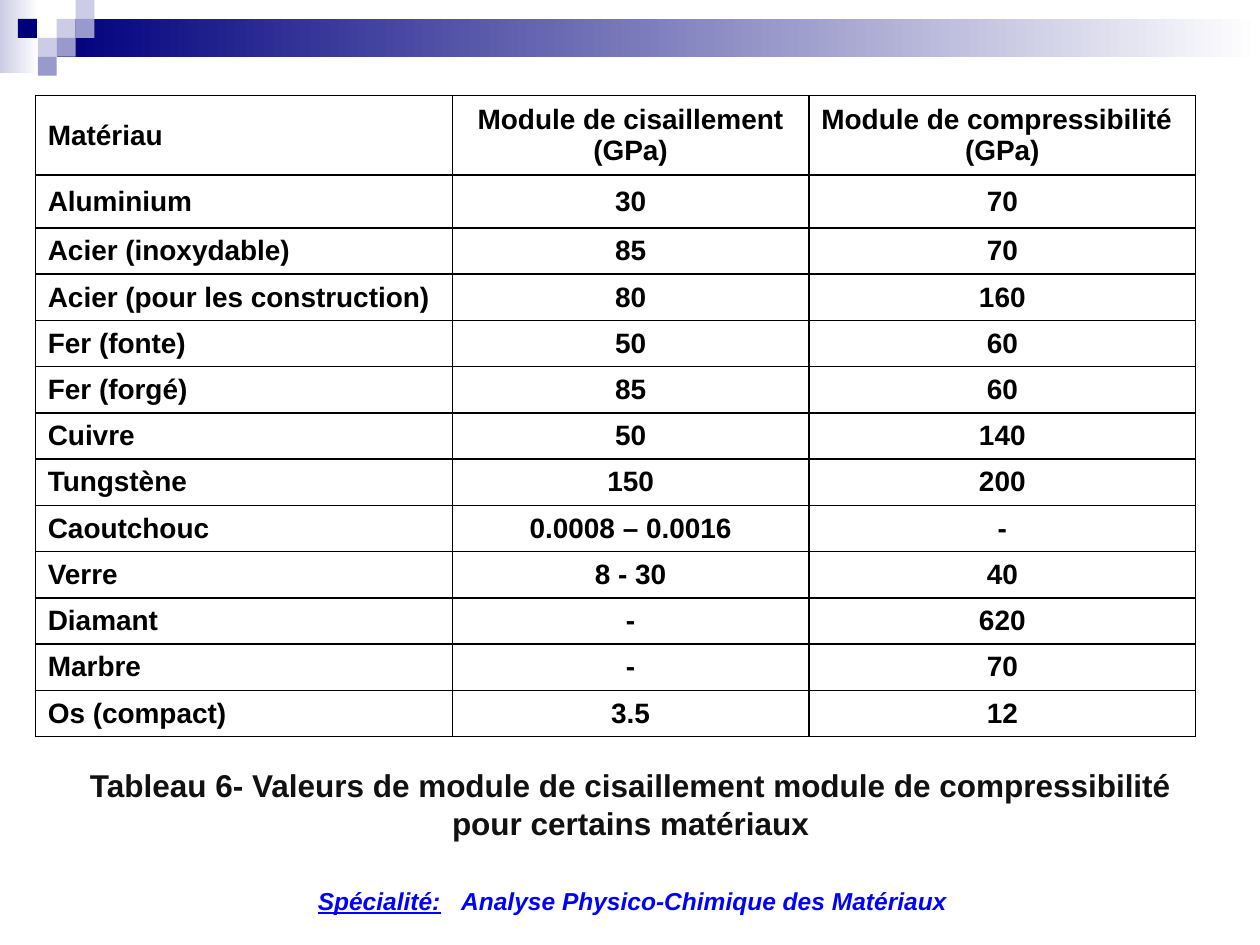
from lxml import etree
from pptx import Presentation
from pptx.dml.color import RGBColor
from pptx.enum.shapes import MSO_SHAPE
from pptx.enum.text import MSO_ANCHOR, PP_ALIGN
from pptx.oxml.ns import qn
from pptx.util import Inches, Pt

RECT = MSO_SHAPE.RECTANGLE
MIDDLE = MSO_ANCHOR.MIDDLE
LEFT, CENTER = PP_ALIGN.LEFT, PP_ALIGN.CENTER

NAVY, LILAC, MAUVE, WHITE = "00007D", "CCCCE6", "9999CC", "FFFFFF"
BLACK, CAPTION, BLUE = "000000", "111111", "0000FF"

COL_WIDTHS = [3.31, 2.83, 3.07]
HEADER_HEIGHT, FIRST_HEIGHT = 0.63, 0.42
ROWS = [
    ("Matériau", "Module de cisaillement\n(GPa)", "Module de compressibilité\n(GPa)"),
    ("Aluminium", "30", "70"),
    ("Acier (inoxydable)", "85", "70"),
    ("Acier (pour les construction)", "80", "160"),
    ("Fer (fonte)", "50", "60"),
    ("Fer (forgé)", "85", "60"),
    ("Cuivre", "50", "140"),
    ("Tungstène", "150", "200"),
    ("Caoutchouc", "0.0008 – 0.0016", "-"),
    ("Verre", "8 - 30", "40"),
    ("Diamant", "-", "620"),
    ("Marbre", "-", "70"),
    ("Os (compact)", "3.5", "12"),
]


def rgb(value):
    return RGBColor.from_string(value)


def set_font(p, size, color, italic=False):
    p.font.name = "Arial"
    p.font.size = Pt(size)
    p.font.bold = True
    p.font.italic = italic
    p.font.color.rgb = rgb(color)


def add_rect(s, x, y, w, h, color, end=None):
    sp = s.shapes.add_shape(RECT, Inches(x), Inches(y), Inches(w), Inches(h))
    sp.shadow.inherit = False
    sp.line.fill.background()
    if end is None:
        sp.fill.solid()
        sp.fill.fore_color.rgb = rgb(color)
        return
    sp.fill.gradient()
    sp.fill.gradient_angle = 0
    for stop, stop_color in zip(sp.fill.gradient_stops, (color, end)):
        stop.color.rgb = rgb(stop_color)


def add_banner(s, x, y, w, unit):
    add_rect(s, x, y, 0.31, 0.58, LILAC, WHITE)
    add_rect(s, x + 3 * unit, y + unit, w - 3 * unit, 2 * unit, NAVY, WHITE)
    squares = [
        (3, 1, LILAC), (4, 0, LILAC), (4, 1, MAUVE), (2, 2, LILAC),
        (0.95, 1, NAVY), (3, 2, MAUVE), (2, 3, MAUVE),
    ]
    for col, row, color in squares:
        add_rect(s, x + col * unit, y + row * unit, unit, unit, color)


def set_borders(cell):
    tcPr = cell._tc.get_or_add_tcPr()
    for i, side in enumerate(("lnL", "lnR", "lnT", "lnB")):
        ln = etree.Element(qn(f"a:{side}"), w=str(Pt(1)))
        fill = etree.SubElement(ln, qn("a:solidFill"))
        etree.SubElement(fill, qn("a:srgbClr"), val=BLACK)
        tcPr.insert(i, ln)


def fill_cell(cell, text, align):
    cell.fill.background()
    cell.vertical_anchor = MIDDLE
    cell.text = text
    for p in cell.text_frame.paragraphs:
        set_font(p, 16, BLACK)
        p.alignment = align
    set_borders(cell)


def add_modulus_table(s, x, y, w, h):
    frame = s.shapes.add_table(
        len(ROWS), len(COL_WIDTHS), Inches(x), Inches(y), Inches(w), Inches(h))
    table = frame.table
    table.first_row = table.horz_banding = False
    for column, width in zip(table.columns, COL_WIDTHS):
        column.width = Inches(width)
    rest = (h - HEADER_HEIGHT - FIRST_HEIGHT) / (len(ROWS) - 2)
    heights = [HEADER_HEIGHT, FIRST_HEIGHT] + [rest] * (len(ROWS) - 2)
    for i, (values, height) in enumerate(zip(ROWS, heights)):
        table.rows[i].height = Inches(height)
        for j, value in enumerate(values):
            fill_cell(table.cell(i, j), value, CENTER if j else LEFT)
    table.cell(0, 2).text_frame.paragraphs[0].alignment = LEFT


def add_paragraph_box(s, x, y, w, h):
    tf = s.shapes.add_textbox(Inches(x), Inches(y), Inches(w), Inches(h)).text_frame
    tf.word_wrap = True
    p = tf.paragraphs[0]
    p.alignment = CENTER
    return p


def add_caption(s, x, y, w, h):
    p = add_paragraph_box(s, x, y, w, h)
    p.text = ("Tableau 6- Valeurs de module de cisaillement module de compressibilité"
              "\vpour certains matériaux")
    set_font(p, 18, CAPTION)


def add_speciality(s, x, y, w, h):
    p = add_paragraph_box(s, x, y, w, h)
    set_font(p, 14, BLUE, italic=True)
    label, gap, name = (p.add_run() for _ in range(3))
    label.text = "Spécialité:"
    label.font.underline = True
    gap.text = " "
    gap._r.get_or_add_rPr().set("spc", "780")
    name.text = "Analyse Physico-Chimique des Matériaux"


def main():
    prs = Presentation()
    prs.slide_width, prs.slide_height = Inches(10), Inches(7.5)
    s = prs.slides.add_slide(prs.slide_layouts[6])
    add_banner(s, 0, 0, 10, 0.15)
    add_modulus_table(s, 0.28, 0.76, 9.21, 5.09)
    add_caption(s, 0.28, 6.03, 9.45, 0.71)
    add_speciality(s, 0.02, 6.98, 10, 0.34)
    prs.save("out.pptx")


if __name__ == "__main__":
    main()
